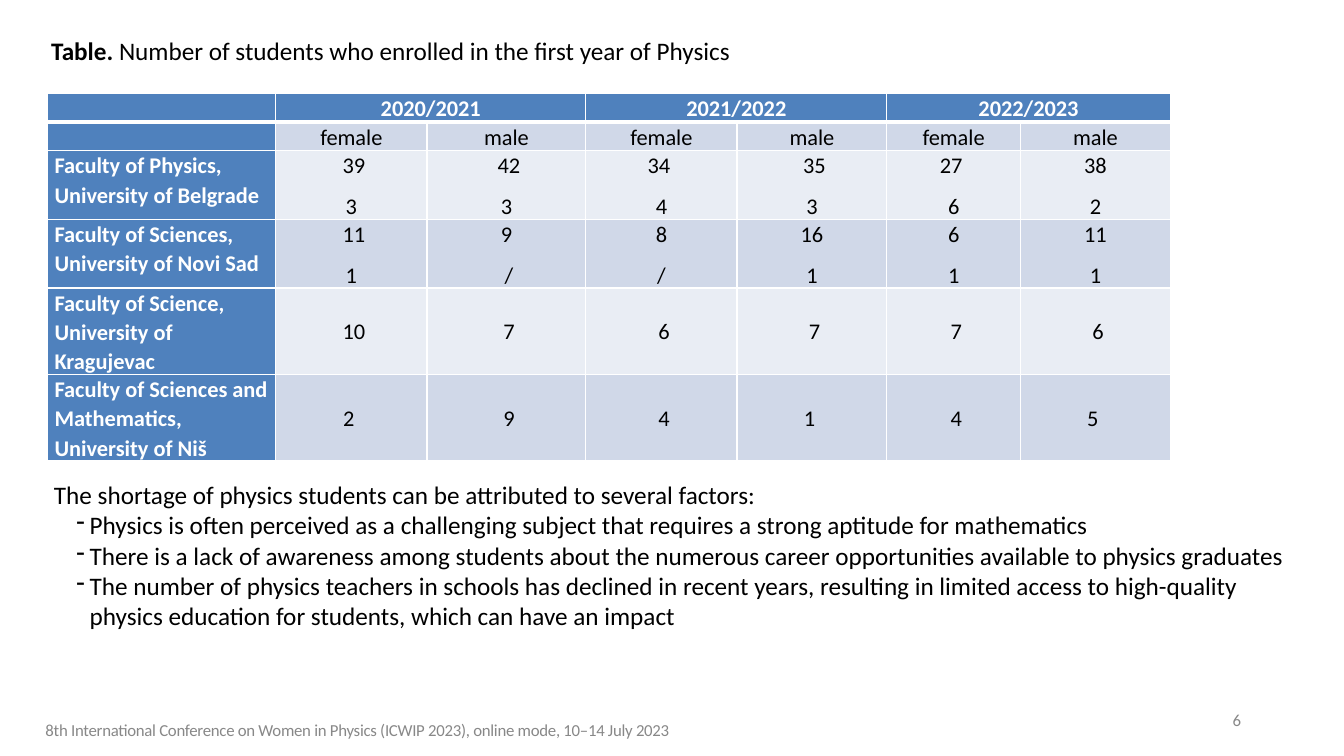
from lxml import etree
from pptx import Presentation
from pptx import util as u
from pptx.dml import color
from pptx.enum import text
from pptx.oxml import ns

COLORS = {
    "header": "4F81BD", "band_dark": "D0D8E8", "band_light": "E9EDF4",
    "white": "FFFFFF", "black": "000000", "footer": "888888",
}
FONT = "Calibri"
YEARS = ["2020/2021", "2021/2022", "2022/2023"]
FACULTIES = [
    ("Faculty of Physics, University of Belgrade",
     [" 39\n3", " 42\n3", "34 \n4", " 35\n3", "27 \n6", "38\n2"]),
    ("Faculty of Sciences, University of Novi Sad",
     [" 11\n1", "9\n /", "8\n/", "16\n1", "6\n1", "11\n1"]),
    ("Faculty of Science, University of Kragujevac",
     [" 10", " 7", " 6", " 7", " 7", " 6"]),
    ("Faculty of Sciences and Mathematics, University of Niš",
     ["2 ", " 9", " 4", "1 ", " 4", "5 "]),
]
COLUMN_WIDTHS = [163, 108, 113.5, 108, 107, 95.5, 107]
ROW_HEIGHTS = [20, 20, 49, 49, 61, 61]
INTRO = "The shortage of physics students can be attributed to several factors:"
FACTORS = [
    "Physics is often perceived as a challenging subject that requires a strong aptitude for mathematics",
    "There is a lack of awareness among students about the numerous career opportunities available to physics graduates",
    "The number of physics teachers in schools has declined in recent years, resulting in limited access to "
    "high-quality physics education for students, which can have an impact",
]


def rgb(name):
    return color.RGBColor.from_string(COLORS[name])


def style(paragraph, size, ink="black", bold=None):
    font = paragraph.font
    font.name, font.size, font.bold = FONT, u.Pt(size), bold
    font.color.rgb = rgb(ink)


def add_frame(slide, box, inset=True):
    frame = slide.shapes.add_textbox(*map(u.Pt, box)).text_frame
    frame.word_wrap = True
    if not inset:
        frame.margin_left = frame.margin_right = frame.margin_top = frame.margin_bottom = 0
    return frame


def add_caption(slide, box):
    caption = add_frame(slide, box).paragraphs[0]
    caption.alignment = text.PP_ALIGN.JUSTIFY
    style(caption, 18)
    label = caption.add_run()
    label.text = "Table. "
    label.font.bold = True
    caption.add_run().text = "Number of students who enrolled in the first year of Physics"


def set_borders(cell, bottom):
    properties = cell._tc.get_or_add_tcPr()
    widths = {"lnL": 1, "lnR": 1, "lnT": 1, "lnB": bottom}
    for position, (side, width) in enumerate(widths.items()):
        line = etree.Element(ns.qn("a:" + side), w=str(u.Pt(width)))
        fill = etree.SubElement(line, ns.qn("a:solidFill"))
        etree.SubElement(fill, ns.qn("a:srgbClr"), val=COLORS["white"])
        properties.insert(position, line)


def fill_cell(cell, words, fill, heading, centred, middle, bottom):
    cell.margin_left = cell.margin_right = u.Pt(5)
    cell.margin_top = cell.margin_bottom = 0
    cell.vertical_anchor = text.MSO_ANCHOR.MIDDLE if middle else text.MSO_ANCHOR.TOP
    cell.fill.solid()
    cell.fill.fore_color.rgb = rgb(fill)
    set_borders(cell, bottom)
    cell.text_frame.text = words
    for paragraph in cell.text_frame.paragraphs:
        paragraph.alignment = text.PP_ALIGN.CENTER if centred else text.PP_ALIGN.LEFT
        paragraph.line_spacing = 1.07
        paragraph.space_after = u.Pt(8)
        style(paragraph, 16, "white" if heading else "black", heading)


def add_enrolment(slide, left, top):
    rows = [[""] + [words for year in YEARS for words in (year, "")]]
    rows.append([""] + ["female", "male"] * len(YEARS))
    rows += [[faculty] + counts for faculty, counts in FACULTIES]
    box = (left, top, sum(COLUMN_WIDTHS), sum(ROW_HEIGHTS))
    enrolment = slide.shapes.add_table(len(rows), len(rows[0]), *map(u.Pt, box)).table
    enrolment.first_row = enrolment.horz_banding = False
    for column, width in zip(enrolment.columns, COLUMN_WIDTHS):
        column.width = u.Pt(width)
    for row, height in zip(enrolment.rows, ROW_HEIGHTS):
        row.height = u.Pt(height)
    for r, row in enumerate(rows):
        band = "band_dark" if r % 2 else "band_light"
        for c, words in enumerate(row):
            heading = r == 0 or c == 0
            fill_cell(enrolment.cell(r, c), words, "header" if heading else band, heading,
                      centred=c > 0, middle=r > 1 and c > 0, bottom=1 if r else 3)
    for c in range(1, len(rows[0]), 2):
        enrolment.cell(0, c).merge(enrolment.cell(0, c + 1))


def add_factors(slide, box):
    frame = add_frame(slide, box)
    frame.text = INTRO
    style(frame.paragraphs[0], 18)
    for factor in FACTORS:
        paragraph = frame.add_paragraph()
        paragraph.text = factor
        style(paragraph, 18)
        properties = paragraph._p.get_or_add_pPr()
        properties.set("marL", str(u.Pt(25.5)))
        properties.set("indent", str(u.Pt(-9.5)))
        bullet = etree.Element(ns.qn("a:buChar"), char="-")
        properties.find(ns.qn("a:defRPr")).addprevious(bullet)


def add_footer(slide, box, words, spacing=0):
    footer = add_frame(slide, box, inset=False).paragraphs[0]
    footer.line_spacing = u.Pt(12.4)
    style(footer, 12, "footer")
    run = footer.add_run()
    run.text = words
    if spacing:
        run._r.get_or_add_rPr().set("spc", str(spacing))


def main():
    deck = Presentation()
    deck.slide_width, deck.slide_height = u.Pt(960), u.Pt(540)
    slide = deck.slides.add_slide(deck.slide_layouts[6])
    add_footer(slide, (880.5, 509, 12, 13.5), "6")
    add_footer(slide, (32.5, 516, 484, 12.5),
               "8th International Conference on Women in Physics (ICWIP 2023), online mode, 10–14 July 2023", -20)
    add_enrolment(slide, 34, 66.5)
    add_caption(slide, (29.5, 21.5, 747.5, 29))
    add_factors(slide, (31.5, 339, 895, 116.5))
    deck.save("out.pptx")


if __name__ == "__main__":
    main()
